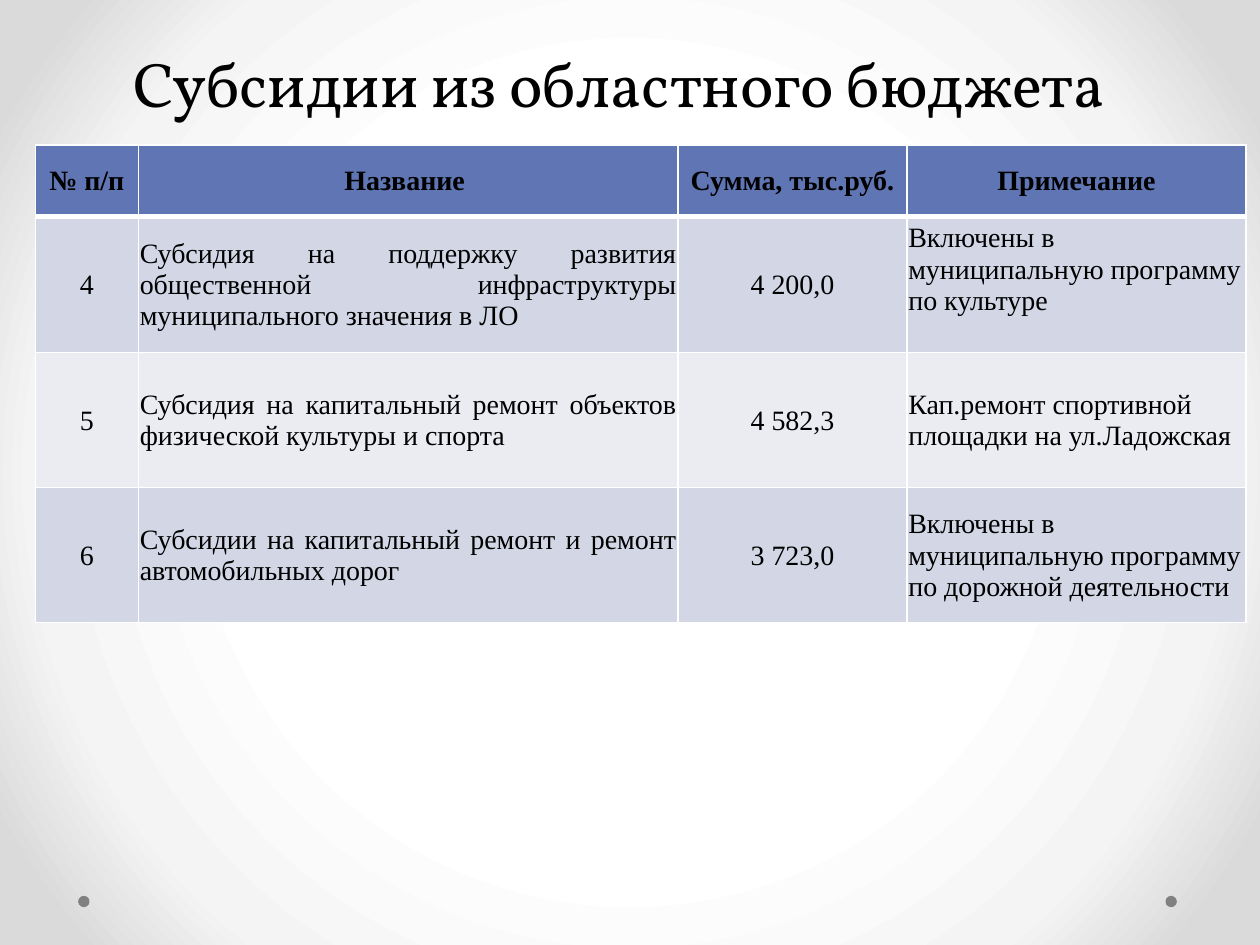
import pptx
import pptx.util
import pptx.dml.color
import pptx.enum.shapes
import pptx.enum.text
import pptx.oxml
import pptx.oxml.ns
from dataclasses import dataclass

Inches = pptx.util.Inches
Pt = pptx.util.Pt
RGB = pptx.dml.color.RGBColor.from_string
ALIGN = pptx.enum.text.PP_ALIGN
ANCHOR = pptx.enum.text.MSO_ANCHOR
NS = pptx.oxml.ns.nsdecls("a")


@dataclass(frozen=True)
class Theme:
    title_font: str = "Vollkorn"
    body_font: str = "Times New Roman"
    title_size: int = 36
    body_size: int = 16
    text: str = "000000"
    header: str = "6076B4"
    bands: tuple = ("D2D6E5", "EAECF2")
    border: str = "FFFFFF"
    dot: str = "808080"
    glow: tuple = ((50, "FFFFFF"), (76, "F4F4F4"), (92, "DADADA"))


def write(tf, text, *, font, size, color, align=ALIGN.LEFT, bold=False, spacing=None):
    p = tf.paragraphs[0]
    p.alignment = align
    if spacing:
        p.line_spacing = Pt(spacing)
    r = p.add_run()
    r.text = text
    r.font.name = font
    r.font.size = Pt(size)
    r.font.bold = bold
    r.font.color.rgb = RGB(color)


class Deck:
    def __init__(self, prs, theme):
        self.theme = theme
        self.s = prs.slides.add_slide(prs.slide_layouts[5])

    def background(self):
        self.s.background.fill.gradient()
        grad = self.s._element.find(".//" + pptx.oxml.ns.qn("a:gradFill"))
        for child in list(grad):
            grad.remove(child)
        stops = "".join(
            f'<a:gs pos="{pos * 1000}"><a:srgbClr val="{color}"/></a:gs>'
            for pos, color in self.theme.glow
        )
        grad.append(pptx.oxml.parse_xml(f"<a:gsLst {NS}>{stops}</a:gsLst>"))
        grad.append(pptx.oxml.parse_xml(
            f'<a:path {NS} path="circle">'
            '<a:fillToRect l="50000" t="50000" r="50000" b="50000"/></a:path>'
        ))

    def dot(self, x, y, size):
        sp = self.s.shapes.add_shape(
            pptx.enum.shapes.MSO_SHAPE.OVAL, Inches(x), Inches(y), Inches(size), Inches(size)
        )
        sp.shadow.inherit = False
        sp.fill.solid()
        sp.fill.fore_color.rgb = RGB(self.theme.dot)
        sp.line.fill.background()

    def title(self, text, x, y, w, h):
        sp = self.s.shapes.title
        sp.left, sp.top, sp.width, sp.height = map(Inches, (x, y, w, h))
        tf = sp.text_frame
        tf.word_wrap = True
        tf.auto_size = pptx.enum.text.MSO_AUTO_SIZE.NONE
        tf.vertical_anchor = ANCHOR.BOTTOM
        write(tf, text, font=self.theme.title_font, size=self.theme.title_size,
              color=self.theme.text, align=ALIGN.CENTER, spacing=58)

    def borders(self, cell, top, bottom):
        tc_pr = cell._tc.get_or_add_tcPr()
        for side, width in (("L", 1), ("R", 1), ("T", top), ("B", bottom)):
            tc_pr.append(pptx.oxml.parse_xml(
                f'<a:ln{side} {NS} w="{Pt(width)}"><a:solidFill>'
                f'<a:srgbClr val="{self.theme.border}"/></a:solidFill></a:ln{side}>'
            ))

    def cell(self, cell, text, row, align):
        header = row == 0
        cell.margin_left = cell.margin_right = cell.margin_top = Inches(0.01)
        cell.margin_bottom = 0
        cell.vertical_anchor = ANCHOR.MIDDLE
        self.borders(cell, 3 if row == 1 else 1, 3 if header else 1)
        cell.fill.solid()
        color = self.theme.header if header else self.theme.bands[(row - 1) % 2]
        cell.fill.fore_color.rgb = RGB(color)
        write(cell.text_frame, text, font=self.theme.body_font, size=self.theme.body_size,
              color=self.theme.text, align=ALIGN.CENTER if header else align, bold=header)

    def table(self, rows, x, y, widths, heights, aligns):
        table = self.s.shapes.add_table(
            len(rows), len(widths), Inches(x), Inches(y),
            Inches(sum(widths)), Inches(sum(heights))
        ).table
        table.first_row = table.horz_banding = False
        for column, width in zip(table.columns, widths):
            column.width = Inches(width)
        for i, (values, height) in enumerate(zip(rows, heights)):
            table.rows[i].height = Inches(height)
            for j, (text, align) in enumerate(zip(values, aligns)):
                self.cell(table.cell(i, j), text, i, align)
        return table


SUBSIDIES = [
    ("№ п/п", "Название ", "Сумма, тыс.руб.", "Примечание"),
    ("4", "Субсидия на поддержку развития общественной инфраструктуры муниципального значения в ЛО",
     "4 200,0", "Включены в муниципальную программу по культуре"),
    ("5", "Субсидия на капитальный ремонт объектов физической культуры и спорта",
     "4 582,3", "Кап.ремонт спортивной площадки на ул.Ладожская"),
    ("6", "Субсидии на капитальный ремонт и ремонт автомобильных дорог",
     "3 723,0", "Включены в муниципальную программу по дорожной деятельности"),
]


def main():
    prs = pptx.Presentation()
    prs.slide_width, prs.slide_height = Inches(10), Inches(7.5)
    deck = Deck(prs, Theme())
    deck.background()
    for x in (9.25, 0.62):
        deck.dot(x, 7.11, 0.09)
    deck.title("Субсидии из областного бюджета ", 0.43, 0.29, 9.07, 0.71)
    table = deck.table(
        SUBSIDIES, 0.28, 1.15, (0.82, 4.28, 1.82, 2.69), (0.57, 1.08, 1.07, 1.07),
        (ALIGN.CENTER, ALIGN.JUSTIFY, ALIGN.CENTER, ALIGN.LEFT),
    )
    table.cell(1, 3).margin_bottom = Inches(0.25)
    prs.save("out.pptx")


if __name__ == "__main__":
    main()
